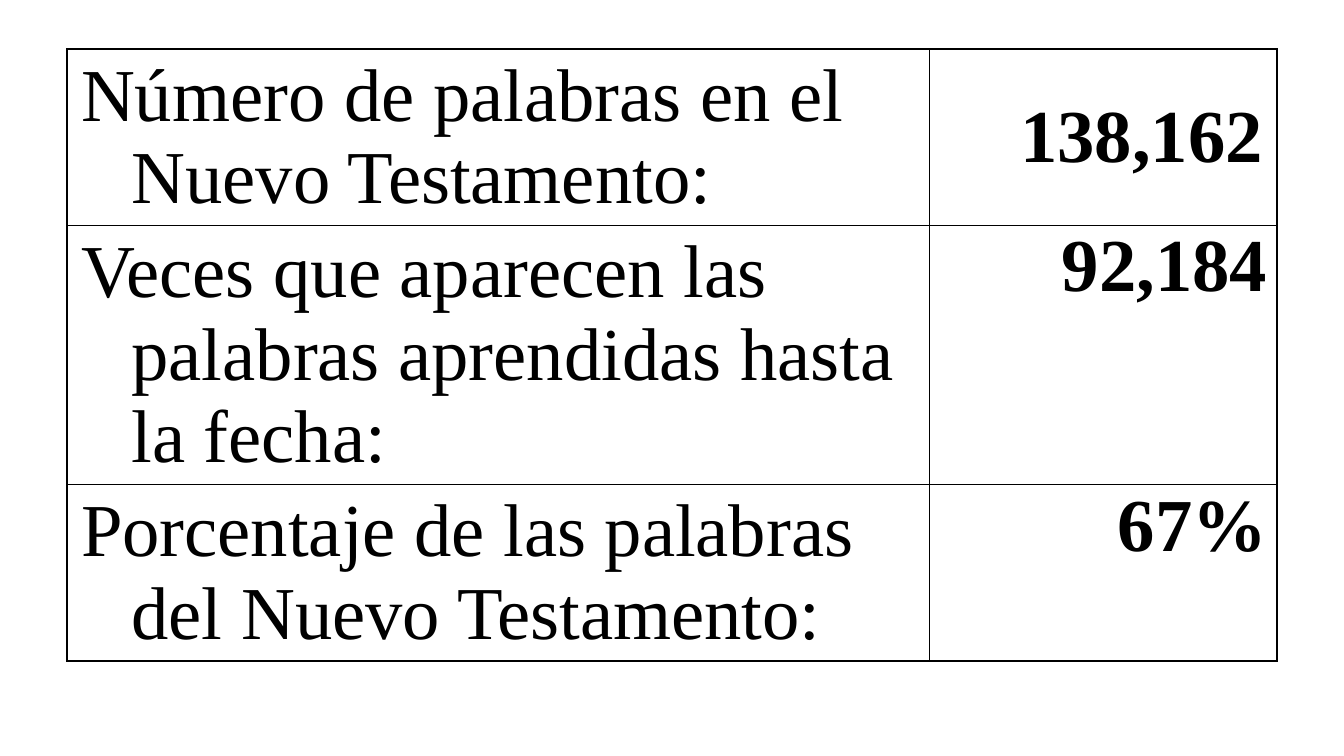
from lxml.etree import SubElement
from pptx import Presentation
from pptx.dml.color import RGBColor
from pptx.enum.text import MSO_ANCHOR, PP_ALIGN
from pptx.oxml.ns import qn
from pptx.util import Pt

PX = 9525
INK = "000000"
COLS = [616, 248]
ROWS = [125, 185, 125]
WIDE = (10, 4)
SLIM = (7, 0)
FACTS = [
    ("Número de palabras en el Nuevo Testamento:", "138,162",
     dict(hang=36, mid=True)),
    ("Veces que aparecen las palabras aprendidas hasta la fecha:", "92,184",
     dict(pad=SLIM)),
    ("Porcentaje de las palabras del Nuevo Testamento:", "67%",
     dict(pad=SLIM)),
]


def px(num):
    return num * PX


def tint(code):
    return RGBColor.from_string(code)


def write(cell, text, bold=False, right=False, hang=0, mid=False, pad=WIDE):
    cell.margin_left = cell.margin_right = px(pad[0])
    cell.margin_top = cell.margin_bottom = px(pad[1])
    cell.vertical_anchor = MSO_ANCHOR.MIDDLE if mid else MSO_ANCHOR.TOP
    para = cell.text_frame.paragraphs[0]
    para.alignment = PP_ALIGN.RIGHT if right else PP_ALIGN.LEFT
    if hang:
        props = para._p.get_or_add_pPr()
        props.set("marL", str(px(hang)))
        props.set("indent", str(-px(hang)))
    run = para.add_run()
    run.text = text
    run.font.name = "Times New Roman"
    run.font.size = Pt(40)
    run.font.bold = bold
    run.font.color.rgb = tint(INK)


def edge(cell):
    props = cell._tc.get_or_add_tcPr()
    for side in ("a:lnL", "a:lnR", "a:lnT", "a:lnB"):
        line = SubElement(props, qn(side), w=str(Pt(1)))
        fill = SubElement(line, qn("a:solidFill"))
        SubElement(fill, qn("a:srgbClr"), val=INK)
    cell.fill.background()


def grid(slide, left, top):
    frame = slide.shapes.add_table(
        len(ROWS), len(COLS), px(left), px(top), px(sum(COLS)), px(sum(ROWS)))
    table = frame.table
    table.first_row = table.horz_banding = False
    for col, wide in zip(table.columns, COLS):
        col.width = px(wide)
    for row, high, (label, value, form) in zip(table.rows, ROWS, FACTS):
        row.height = px(high)
        name, count = row.cells
        write(name, label, hang=36)
        write(count, value, bold=True, right=True, **form)
        edge(name)
        edge(count)


def main():
    deck = Presentation()
    deck.slide_width, deck.slide_height = px(960), px(540)
    slide = deck.slides.add_slide(deck.slide_layouts[6])
    grid(slide, 48, 35)
    deck.save("out.pptx")


if __name__ == "__main__":
    main()
